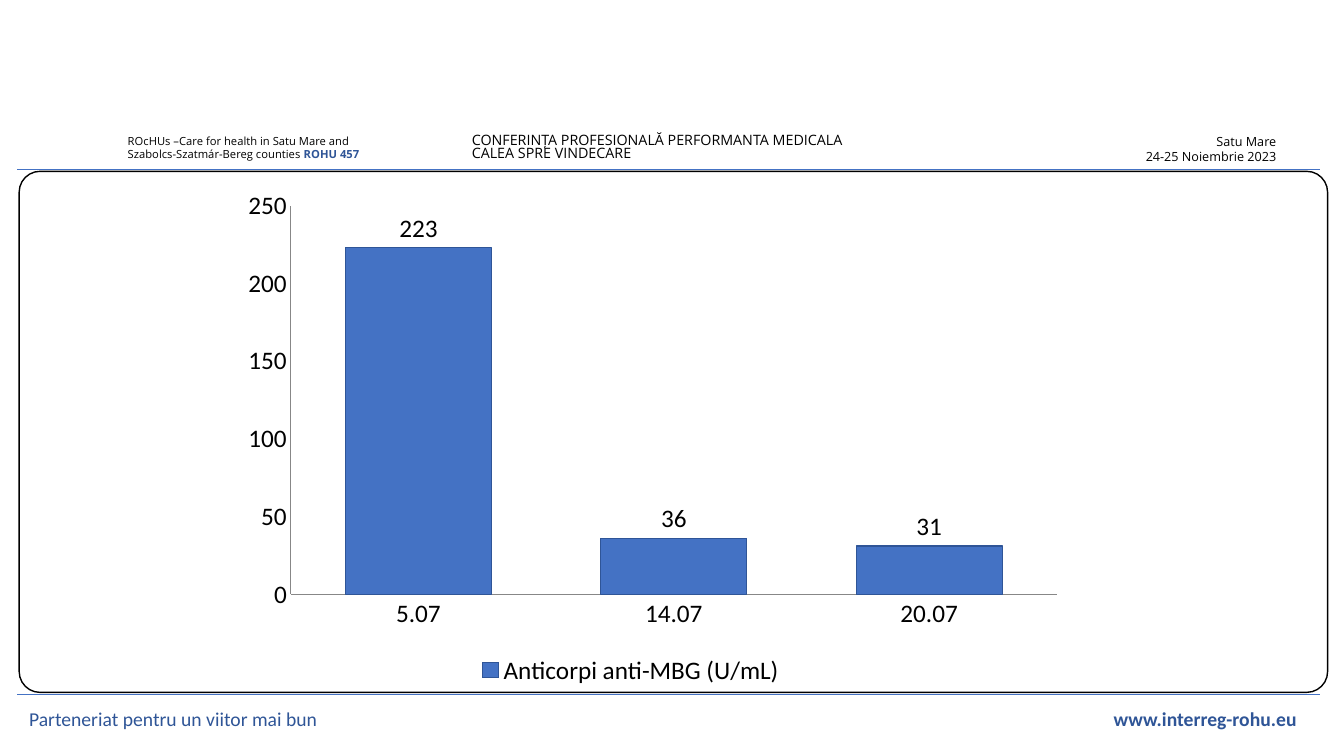
from dataclasses import dataclass

from lxml import etree
from pptx import Presentation
from pptx.chart.data import CategoryChartData
from pptx.dml.color import RGBColor
from pptx.enum.chart import XL_CHART_TYPE, XL_LABEL_POSITION, XL_LEGEND_POSITION, XL_TICK_MARK
from pptx.enum.shapes import MSO_CONNECTOR, MSO_SHAPE
from pptx.enum.text import MSO_ANCHOR, MSO_AUTO_SIZE, PP_ALIGN
from pptx.oxml.ns import qn
from pptx.util import Pt

COLUMN = XL_CHART_TYPE.COLUMN_CLUSTERED
OUTSIDE = XL_LABEL_POSITION.OUTSIDE_END
BOTTOM = XL_LEGEND_POSITION.BOTTOM
NO_TICK = XL_TICK_MARK.NONE
STRAIGHT = MSO_CONNECTOR.STRAIGHT
ROUNDED = MSO_SHAPE.ROUNDED_RECTANGLE
TOP, MIDDLE = MSO_ANCHOR.TOP, MSO_ANCHOR.MIDDLE
NO_FIT = MSO_AUTO_SIZE.NONE
LEFT, RIGHT = PP_ALIGN.LEFT, PP_ALIGN.RIGHT

BLACK = RGBColor(0x00, 0x00, 0x00)
GREY = RGBColor(0x87, 0x87, 0x87)
BLUE = RGBColor(0x44, 0x72, 0xC4)
NAVY = RGBColor(0x2F, 0x55, 0x97)
SANS, BODY = "Open Sans", "Calibri"


@dataclass(frozen=True)
class Run:
    text: str
    color: RGBColor = BLACK
    bold: bool = False


@dataclass(frozen=True)
class Block:
    left: float
    top: float
    width: float
    height: float
    lines: tuple[tuple[Run, ...], ...]
    size: float
    font: str = SANS
    align: PP_ALIGN = LEFT
    anchor: MSO_ANCHOR = TOP
    space: float = 1.0
    tab: float = 0


TITLE = Block(
    329.8, 92.2, 410.4, 28.8,
    ((Run("CONFERINȚA PROFESIONALĂ PERFORMANTA MEDICALA"),),
     (Run("CALEA SPRE VINDECARE"),)),
    10.2, space=0.8)
BLOCKS = (
    Block(758.9, 92.2, 159.8, 28.8,
          ((Run("Satu Mare"),), (Run("24-25 Noiembrie 2023"),)),
          9, align=RIGHT),
    Block(84.2, 92.2, 244.8, 26.6,
          ((Run("ROcHUs –Care for health in Satu Mare and"),),
           (Run("Szabolcs-Szatmár-Bereg counties "),
            Run("ROHU 457", NAVY, True))),
          8),
    Block(13.7, 499, 929.5, 28.8,
          ((Run("Parteneriat pentru un viitor mai bun", NAVY),
            Run("\twww.interreg-rohu.eu", NAVY, True)),),
          14, BODY, anchor=MIDDLE, tab=905.5),
)
RULES = (121, 496.1)
PLOT = {"x": 0.101, "y": 0.057, "w": 0.899, "h": 0.756}


def write(para, text: str, *, size: float, font: str, color: RGBColor, bold: bool) -> None:
    run = para.add_run()
    run.text = text
    run.font.size = Pt(size)
    run.font.name = font
    run.font.color.rgb = color
    run.font.bold = bold


def fill_block(shape, block: Block) -> None:
    shape.left, shape.top = Pt(block.left), Pt(block.top)
    shape.width, shape.height = Pt(block.width), Pt(block.height)
    frame = shape.text_frame
    frame.word_wrap = True
    frame.auto_size = NO_FIT
    frame.vertical_anchor = block.anchor
    for i, line in enumerate(block.lines):
        para = frame.add_paragraph() if i else frame.paragraphs[0]
        if block.tab:
            props = para._p.get_or_add_pPr()
            tabs = etree.SubElement(props, qn("a:tabLst"))
            etree.SubElement(tabs, qn("a:tab"), pos=str(Pt(block.tab)), algn="r")
        para.alignment = block.align
        para.line_spacing = block.space
        for run in line:
            write(para, run.text, size=block.size, font=block.font,
                  color=run.color, bold=run.bold)


def draw_rule(slide, top: float) -> None:
    rule = slide.shapes.add_connector(STRAIGHT, Pt(12.2), Pt(top), Pt(943.2), Pt(top))
    rule.line.color.rgb = BLUE
    rule.line.width = Pt(0.5)
    etree.SubElement(rule._element.spPr, qn("a:effectLst"))


def draw_frame(slide) -> None:
    frame = slide.shapes.add_shape(ROUNDED, Pt(13.7), Pt(122.4), Pt(934.6), Pt(372.2))
    frame.adjustments[0] = 0.04
    frame.shadow.inherit = False
    frame.fill.background()
    frame.line.color.rgb = BLACK
    frame.line.width = Pt(1)


def place_plot(chart) -> None:
    area = chart._chartSpace.chart.plotArea
    for old in area.findall(qn("c:layout")):
        area.remove(old)
    layout = etree.Element(qn("c:layout"))
    manual = etree.SubElement(layout, qn("c:manualLayout"))
    modes = {"layoutTarget": "inner", "xMode": "edge", "yMode": "edge"}
    for tag, val in (modes | PLOT).items():
        etree.SubElement(manual, qn(f"c:{tag}"), val=str(val))
    area.insert(0, layout)


def draw_chart(slide) -> None:
    data = CategoryChartData()
    data.categories = ["5.07", "14.07", "20.07"]
    data.add_series("Anticorpi anti-MBG (U/mL)", (223, 36, 31))
    chart = slide.shapes.add_chart(
        COLUMN, Pt(146.2), Pt(126), Pt(609.1), Pt(367.2), data).chart
    chart.font.size = Pt(18)
    chart.font.name = BODY
    chart.font.color.rgb = BLACK
    chart.has_title = False
    chart.has_legend = True
    chart.legend.position = BOTTOM
    chart.legend.include_in_layout = False
    for axis in (chart.category_axis, chart.value_axis):
        axis.major_tick_mark = axis.minor_tick_mark = NO_TICK
        axis.has_major_gridlines = False
        axis.format.line.color.rgb = GREY
        axis.format.line.width = Pt(0.75)
    chart.value_axis.minimum_scale = 0
    chart.value_axis.maximum_scale = 250
    chart.value_axis.major_unit = 50
    plot = chart.plots[0]
    plot.gap_width = 75
    plot.vary_by_categories = False
    plot.has_data_labels = True
    plot.data_labels.show_value = True
    plot.data_labels.position = OUTSIDE
    bars = plot.series[0].format
    bars.fill.solid()
    bars.fill.fore_color.rgb = BLUE
    bars.line.color.rgb = NAVY
    bars.line.width = Pt(0.75)
    place_plot(chart)


def main() -> None:
    deck = Presentation()
    deck.slide_width, deck.slide_height = Pt(960), Pt(540)
    slide = deck.slides.add_slide(deck.slide_layouts[5])
    fill_block(slide.shapes.title, TITLE)
    for top in RULES:
        draw_rule(slide, top)
    draw_frame(slide)
    for block in BLOCKS:
        box = slide.shapes.add_textbox(0, 0, 0, 0)
        fill_block(box, block)
    draw_chart(slide)
    deck.save("out.pptx")


if __name__ == "__main__":
    main()
